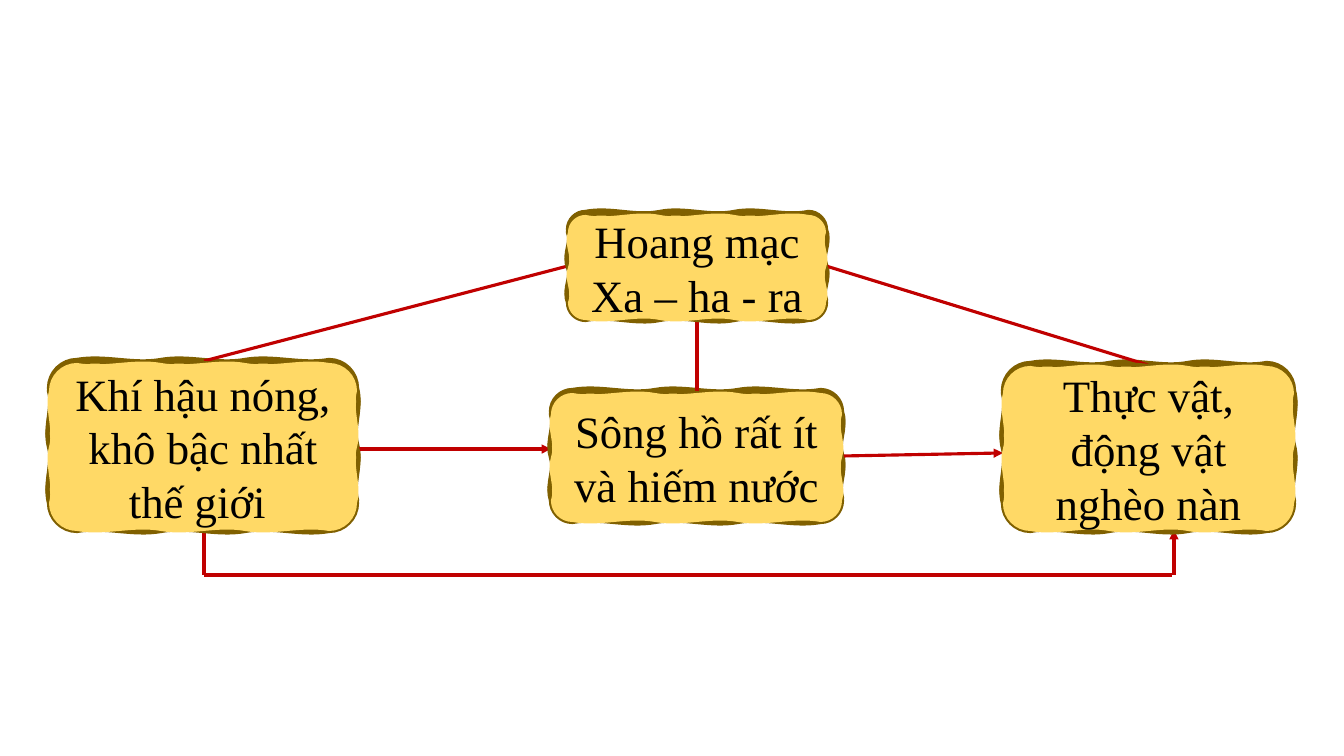
from copy import deepcopy

from lxml.etree import SubElement
from pptx import Presentation
from pptx.dml.color import RGBColor
from pptx.enum.shapes import MSO_CONNECTOR as Connector
from pptx.enum.text import MSO_ANCHOR as Anchor, PP_ALIGN as Align
from pptx.oxml.ns import qn
from pptx.util import Pt

GOLD = RGBColor(0xFF, 0xD9, 0x66)
BROWN = RGBColor(0x80, 0x60, 0x00)
RED = RGBColor(0xC0, 0x00, 0x00)
BLACK = RGBColor(0x00, 0x00, 0x00)

WIDTH, HEIGHT = 1344, 756
SCALE = 12192000 / WIDTH
LIFT = 3
WAVE = 5

PLATES = [
    ("Hoang mạc Xa – ha - ra", 568, 215, 258, 105),
    ("Khí hậu nóng, khô bậc nhất thế giới ", 49, 363, 308, 168),
    ("Sông hồ rất ít và hiếm nước", 551, 393, 291, 129),
    ("Thực vật, động vật nghèo nàn", 1003, 366, 291, 165),
]

LINKS = [
    (568, 266, 204, 361, False),
    (697, 319, 697, 391, False),
    (826, 266, 1148, 365, False),
    (358, 449, 551, 449, True),
    (843, 456, 1003, 453, True),
    (204, 530, 204, 575, False),
    (204, 575, 1172, 575, False),
    (1174, 575, 1174, 530, True),
]


def emu(px):
    """Turn px into EMU."""
    return round(px * SCALE)


def wavy_outline(left, top, width, height, wave):
    """Return a start point, then three curve points for each piece of a wavy rounded rectangle."""
    radius = height / 6
    right, bottom = left + width, top + height
    corners = [
        (right, top, 1, 0, height, 2),
        (right, bottom, 0, 1, width, 3),
        (left, bottom, -1, 0, height, 2),
        (left, top, 0, -1, width, 3),
    ]
    points = [(right - radius, top)]
    for x, y, out_x, out_y, side, pieces in corners:

        def place(along, outward):
            return x - out_y * along + out_x * outward, y + out_x * along + out_y * outward

        points += [place(0, -0.45 * radius), place(0.45 * radius, 0), place(radius, 0)]
        step = (side - 2 * radius) / pieces
        for piece in range(pieces):
            start = radius + piece * step
            points += [
                place(start + step / 3, wave),
                place(start + step * 2 / 3, -wave),
                place(start + step, 0),
            ]
    return [(emu(x), emu(y)) for x, y in points]


def bend(path):
    """Join each three line pieces of a path into one curve."""
    lines = path.findall(qn("a:lnTo"))
    for first, second, third in zip(lines[::3], lines[1::3], lines[2::3]):
        first.tag = qn("a:cubicBezTo")
        for line in (second, third):
            first.append(line[0])
            path.remove(line)


class Diagram:
    """Hold the style and the current slide of a box diagram."""

    font_name = "Times New Roman"
    font_size = Pt(32)

    def __init__(self):
        """Open a deck with one blank page."""
        self.deck = Presentation()
        self.deck.slide_width, self.deck.slide_height = emu(WIDTH), emu(HEIGHT)
        self.page = self.deck.slides.add_slide(self.deck.slide_layouts[6])

    def plate(self, *place, waves=(WAVE,)):
        """Draw a wavy plate with one contour for each wave."""
        builder = None
        for wave in waves:
            start, *rest = wavy_outline(*place, wave)
            if builder:
                builder.move_to(*start)
            else:
                builder = self.page.shapes.build_freeform(*start, scale=1.0)
            builder.add_line_segments(rest, close=True)
        box = builder.convert_to_shape()
        box.shadow.inherit = False
        box.fill.solid()
        box.fill.fore_color.rgb = GOLD
        box.line.color.rgb = BROWN
        box.line.width = Pt(3)
        bend(box._element.find(".//" + qn("a:path")))
        return box

    def label(self, text, left, top, width, height):
        """Draw a plate with its fill over its outline, and centred text."""
        box = self.plate(left, top, width, height, waves=(WAVE, -WAVE))
        edge = box._element.find(".//" + qn("a:path"))
        face = deepcopy(edge)
        half = len(edge) // 2
        for node in edge[half:]:
            edge.remove(node)
        for node in face[:half]:
            face.remove(node)
        edge.set("fill", "none")
        face.set("stroke", "0")
        edge.addnext(face)
        frame = box.text_frame
        frame.word_wrap = True
        frame.vertical_anchor = Anchor.MIDDLE
        frame.margin_left = frame.margin_right = emu(10 + height // 20)
        frame.margin_top = frame.margin_bottom = 0
        para = frame.paragraphs[0]
        para.text = text
        para.alignment = Align.CENTER
        para.font.name = self.font_name
        para.font.size = self.font_size
        para.font.color.rgb = BLACK

    def link(self, start_x, start_y, end_x, end_y, arrow):
        """Draw a straight line, with an arrowhead at its end if asked."""
        ends = [emu(px) for px in (start_x, start_y, end_x, end_y)]
        line = self.page.shapes.add_connector(Connector.STRAIGHT, *ends)
        line.line.color.rgb = RED
        line.line.width = Pt(2.25)
        if arrow:
            SubElement(line.line._get_or_add_ln(), qn("a:tailEnd"), type="triangle")
        SubElement(line._element.spPr, qn("a:effectLst"))


def main():
    """Build the diagram and save it."""
    diagram = Diagram()
    for _, left, top, width, height in PLATES:
        diagram.plate(left, top - LIFT, width, height)
    for link in LINKS:
        diagram.link(*link)
    for plate in PLATES:
        diagram.label(*plate)
    diagram.deck.save("out.pptx")


if __name__ == "__main__":
    main()
